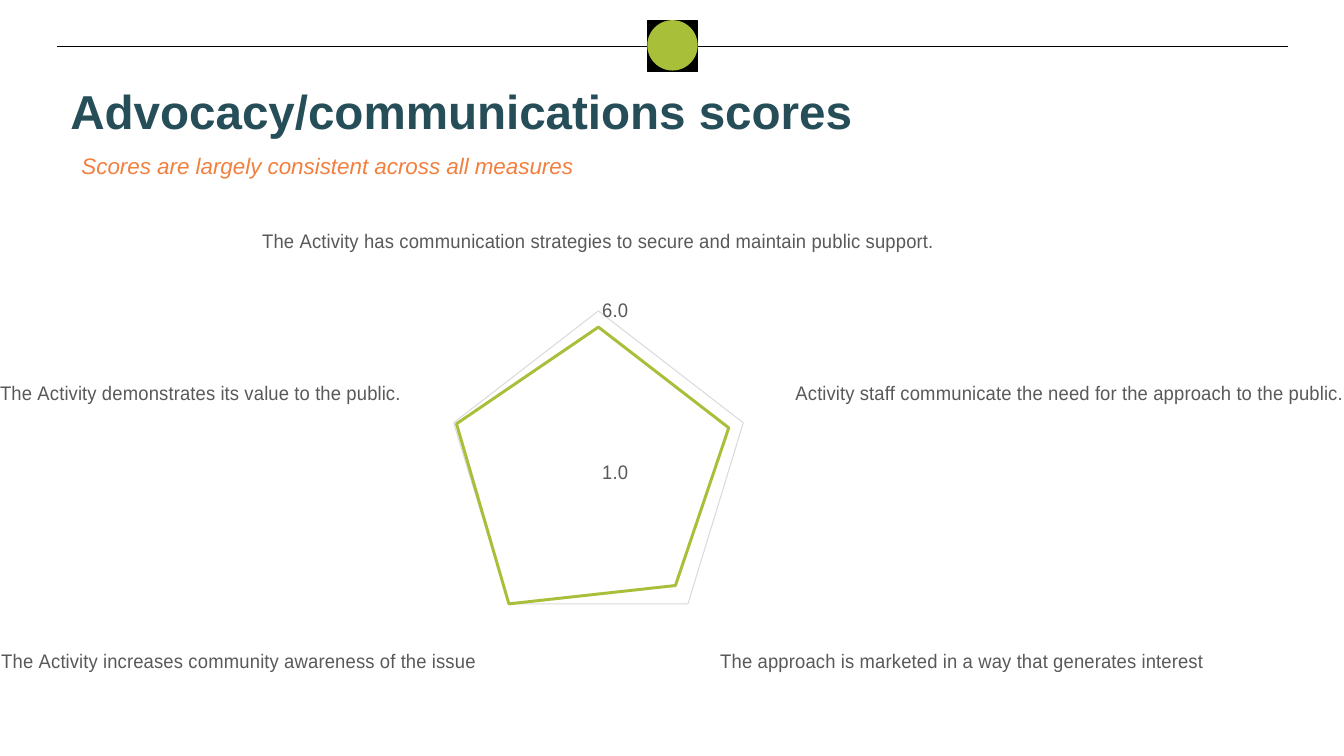
from lxml import etree
from pptx import Presentation
from pptx.chart.data import CategoryChartData
from pptx.dml.color import RGBColor
from pptx.enum.chart import XL_CHART_TYPE as ChartType, XL_MARKER_STYLE as Marker, XL_TICK_MARK as Tick
from pptx.enum.shapes import MSO_CONNECTOR as Connector, MSO_SHAPE as Shape
from pptx.enum.text import MSO_ANCHOR as Anchor
from pptx.oxml import parse_xml
from pptx.oxml.ns import nsdecls, qn
from pptx.util import Inches, Pt

TITLE = "Advocacy/communications scores"
SUBTITLE = "Scores are largely consistent across all measures"
SCORES = [
    ("The Activity has communication strategies to secure and maintain public support.", 5.5),
    ("Activity staff communicate the need for the approach to the public.", 5.5),
    ("The approach is marketed in a way that generates interest", 5.3),
    ("The Activity increases community awareness of the issue", 6),
    ("The Activity demonstrates its value to the public.", 5.9),
]
SCALE = {"minimum_scale": 1, "maximum_scale": 7, "major_unit": 5}
PLOT_LAYOUT = {"x": 0.282, "y": 0.225, "w": 0.341, "h": 0.597}


class Theme:
    font = "Arial"
    chart_font = "Cambria"
    title, subtitle, label, chart = Pt(34), Pt(16), Pt(14), Pt(10)
    black = RGBColor.from_string("000000")
    teal = RGBColor.from_string("264E59")
    orange = RGBColor.from_string("F27F3E")
    green = RGBColor.from_string("A7BF39")
    grey = RGBColor.from_string("595959")
    grid = RGBColor.from_string("D9D9D9")


def box(left, top, width, height):
    return [Inches(value) for value in (left, top, width, height)]


def style_font(font, size, color, name=Theme.font):
    font.size, font.name = size, name
    font.color.rgb = color


def style_line(line, color, width):
    line.color.rgb = color
    line.width = Pt(width)


def add_text(slide, place, text, size, color, bold=False, italic=False):
    frame = slide.shapes.add_textbox(*box(*place)).text_frame
    frame.word_wrap = True
    frame.vertical_anchor = Anchor.MIDDLE
    frame.text = text
    font = frame.paragraphs[0].runs[0].font
    style_font(font, size, color)
    font.bold, font.italic = bold, italic


def add_badge_part(slide, kind, top, color):
    part = slide.shapes.add_shape(kind, *box(6.42, top, 0.5, 0.5))
    part.shadow.inherit = False
    part.fill.solid()
    part.fill.fore_color.rgb = color
    return part


def add_header(slide):
    rule = slide.shapes.add_connector(
        Connector.STRAIGHT, Inches(0.57), Inches(0.46), Inches(12.77), Inches(0.46))
    style_line(rule.line, Theme.black, 0.75)
    etree.SubElement(rule._element.spPr, qn("a:effectLst"))
    square = add_badge_part(slide, Shape.RECTANGLE, 0.21, Theme.black)
    style_line(square.line, Theme.black, 1)
    circle = add_badge_part(slide, Shape.OVAL, 0.2, Theme.green)
    circle.line.fill.background()


def set_plot_layout(chart):
    """Fix the inner plot area as fractions of the chart frame."""
    plot_area = chart._chartSpace.chart.plotArea
    for old_layout in plot_area.findall(qn("c:layout")):
        plot_area.remove(old_layout)
    modes = '<c:xMode val="edge"/><c:yMode val="edge"/>'
    sizes = "".join(f'<c:{key} val="{value}"/>' for key, value in PLOT_LAYOUT.items())
    plot_area.insert(0, parse_xml(
        f'<c:layout {nsdecls("c")}><c:manualLayout><c:layoutTarget val="inner"/>'
        f"{modes}{sizes}</c:manualLayout></c:layout>"))


def add_score_radar(slide):
    data = CategoryChartData(number_format="0.0")
    data.categories = [measure for measure, _ in SCORES]
    data.add_series("Series 1", [score for _, score in SCORES])
    chart = slide.shapes.add_chart(
        ChartType.RADAR, *box(0, 1.31, 13.33, 6.46), data).chart
    chart.has_legend = chart.has_title = False
    style_font(chart.font, Theme.chart, Theme.black, Theme.chart_font)
    set_plot_layout(chart)

    measures, scale = chart.category_axis, chart.value_axis
    for axis in (measures, scale):
        axis.major_tick_mark = axis.minor_tick_mark = Tick.NONE
        style_font(axis.tick_labels.font, Theme.label, Theme.grey)
    measures.has_major_gridlines = False
    style_line(measures.format.line, Theme.grid, 0.75)
    for setting, value in SCALE.items():
        setattr(scale, setting, value)
    scale.has_major_gridlines = True
    style_line(scale.major_gridlines.format.line, Theme.grid, 0.75)
    scale.format.line.fill.background()
    scale.tick_labels.number_format = "0.0"
    scale.tick_labels.number_format_is_linked = False

    plot = chart.plots[0]
    plot.vary_by_categories = False
    scores = plot.series[0]
    scores.smooth = False
    scores.marker.style = Marker.NONE
    style_line(scores.format.line, Theme.green, 2.25)


def main():
    deck = Presentation()
    deck.slide_width, deck.slide_height = Inches(13.33), Inches(7.5)
    slide = deck.slides.add_slide(deck.slide_layouts[6])
    add_header(slide)
    add_text(slide, (0.6, 0.75, 9.96, 0.7), TITLE, Theme.title, Theme.teal, bold=True)
    add_text(slide, (0.71, 1.46, 6.31, 0.37), SUBTITLE, Theme.subtitle, Theme.orange, italic=True)
    add_score_radar(slide)
    deck.save("out.pptx")


if __name__ == "__main__":
    main()
